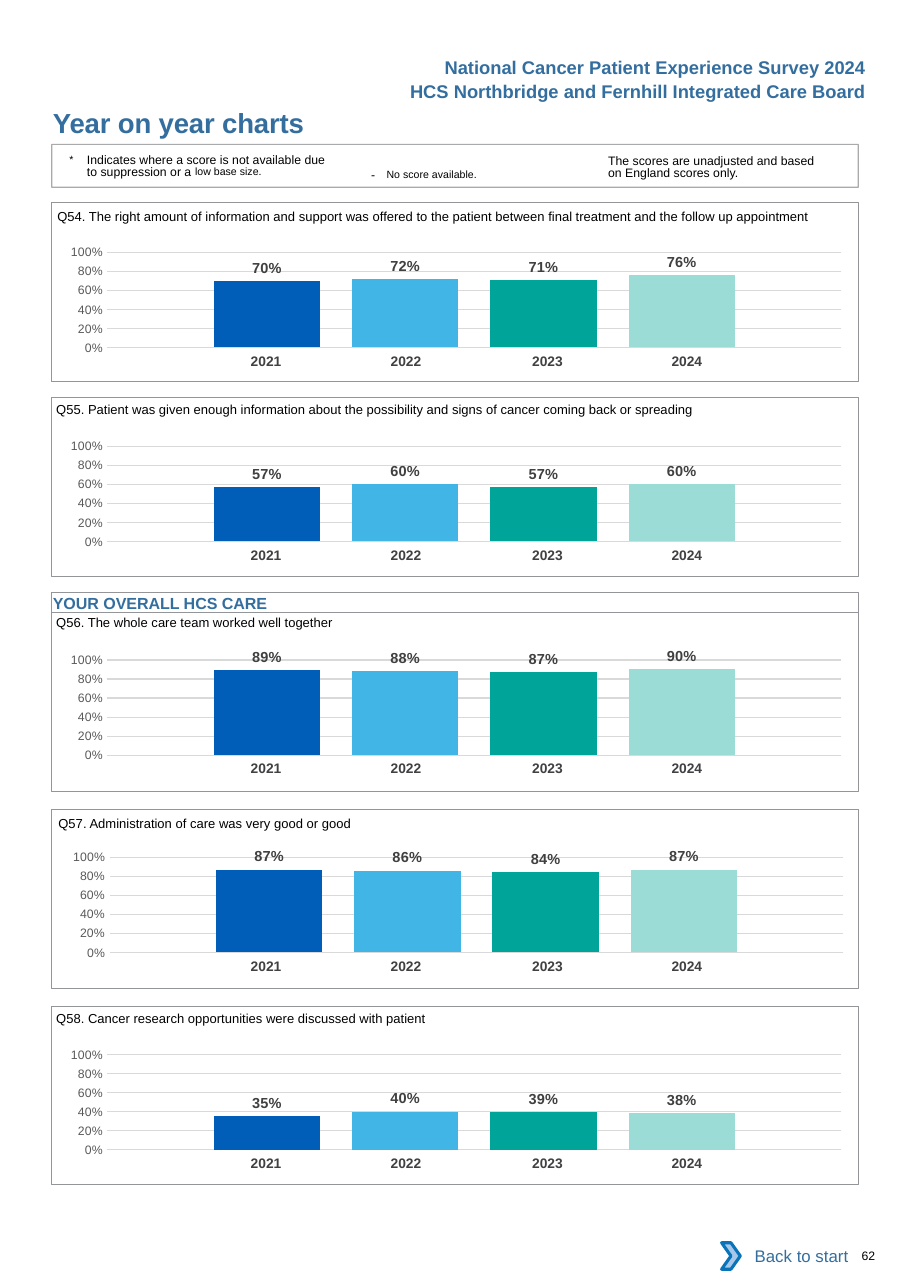
from dataclasses import dataclass
from lxml import etree
from pptx import Presentation
from pptx.chart.data import CategoryChartData
from pptx.dml.color import RGBColor
from pptx.enum.chart import XL_CHART_TYPE, XL_LABEL_POSITION, XL_TICK_MARK
from pptx.enum.shapes import MSO_SHAPE
from pptx.enum.text import MSO_ANCHOR, MSO_AUTO_SIZE, PP_ALIGN
from pptx.oxml import parse_xml
from pptx.oxml.ns import nsdecls, qn
from pptx.util import Inches, Pt

COLUMN, OUTSIDE = XL_CHART_TYPE.COLUMN_CLUSTERED, XL_LABEL_POSITION.OUTSIDE_END
NO_TICK = XL_TICK_MARK.NONE
RECT, CHEVRON = MSO_SHAPE.RECTANGLE, MSO_SHAPE.CHEVRON
TOP, MIDDLE, FIXED = MSO_ANCHOR.TOP, MSO_ANCHOR.MIDDLE, MSO_AUTO_SIZE.NONE
LEFT, CENTER, RIGHT = PP_ALIGN.LEFT, PP_ALIGN.CENTER, PP_ALIGN.RIGHT


@dataclass(frozen=True)
class Theme:
    """Colours, fonts and type sizes."""
    font: str = "Arial"
    chart_font: str = "Calibri"
    heading: str = "336E9F"
    ink: str = "000000"
    white: str = "FFFFFF"
    border: str = "939598"
    axis: str = "595959"
    grid: str = "D9D9D9"
    label: str = "404040"
    year: str = "414042"
    chevron: str = "A8C7E9"
    chevron_line: str = "0A74BB"
    bars: tuple = ("005EB8", "41B6E6", "00A499", "9CDCD7")
    title_size: float = 18
    header_size: float = 12
    link_size: float = 11
    section_size: float = 10.5
    chart_size: float = 10
    label_size: float = 9.5
    year_size: float = 9
    question_size: float = 8.5
    small_size: float = 8


T = Theme()
PANEL_X, PANEL_W, PANEL_H = 0.47, 7.32, 1.62
YEARS = ("2021", "2022", "2023", "2024")
PANELS = (
    (1.84, 0.04, -0.04, 0.27, -0.08, (0.70, 0.72, 0.71, 0.76),
     "Q54. The right amount of information and support was offered to the patient "
     "between final treatment and the follow up appointment"),
    (3.61, 0.03, -0.06, 0.26, -0.08, (0.57, 0.60, 0.57, 0.60),
     "Q55. Patient was given enough information about the possibility and signs of "
     "cancer coming back or spreading"),
    (5.56, 0.03, -0.07, 0.25, -0.08, (0.89, 0.88, 0.87, 0.90),
     "Q56. The whole care team worked well together"),
    (7.35, 0.05, -0.04, 0.25, -0.06, (0.87, 0.86, 0.84, 0.87),
     "Q57. Administration of care was very good or good"),
    (9.13, 0.03, -0.05, 0.26, -0.08, (0.35, 0.40, 0.39, 0.38),
     "Q58. Cancer research opportunities were discussed with patient"),
)


def rgb(value):
    """Return a colour from its hex value."""
    return RGBColor.from_string(value)


def set_font(font, size, color, bold=False, name=T.font):
    """Format a font."""
    font.name, font.size, font.bold = name, Pt(size), bold
    font.color.rgb = rgb(color)


def write(tf, runs, size=T.small_size, color=T.ink, bold=False, align=LEFT, inset=(0, 0, 0, 0),
          anchor=TOP, wrap=True, leading=None, margin=0, indent=0):
    """Fill a text frame with a string or with (text, size, spacing, baseline) runs."""
    tf.auto_size, tf.word_wrap, tf.vertical_anchor = FIXED, wrap, anchor
    tf.margin_left, tf.margin_top, tf.margin_right, tf.margin_bottom = map(Inches, inset)
    p = tf.paragraphs[0]
    p.alignment = align
    if leading:
        p.line_spacing = Pt(leading)
    pPr = p._p.get_or_add_pPr()
    pPr.set("marL", str(Inches(margin)))
    pPr.set("indent", str(Inches(indent)))
    for text, run_size, spacing, baseline in [(runs, size, 0, 0)] if isinstance(runs, str) else runs:
        r = p.add_run()
        r.text = text
        set_font(r.font, run_size, color, bold)
        rPr = r._r.get_or_add_rPr()
        rPr.set("spc", str(int(spacing * 100)))
        rPr.set("baseline", str(baseline * 1000))


def add_text(s, x, y, w, h, runs, **fmt):
    """Add a text box."""
    sp = s.shapes.add_textbox(*map(Inches, (x, y, w, h)))
    write(sp.text_frame, runs, **fmt)


def add_box(s, kind, x, y, w, h, fill=None, line=None, width=0.5):
    """Add a preset shape with optional fill and line."""
    sp = s.shapes.add_shape(kind, *map(Inches, (x, y, w, h)))
    sp.shadow.inherit = False
    for part, color in ((sp.fill, fill), (sp.line.fill, line)):
        if color:
            part.solid()
            part.fore_color.rgb = rgb(color)
        else:
            part.background()
    if line:
        sp.line.width = Pt(width)
    return sp


def add_years(s, x, y):
    """Add the one-row table of years under a chart."""
    widths, right_insets = (1.27, 1.27, 1.34, 1.27), (0, 0, 0.04, 0.12)
    gf = s.shapes.add_table(1, len(YEARS), *map(Inches, (x, y, sum(widths), 0.27)))
    table = gf.table
    table.first_row = table.horz_banding = False
    for style in gf._element.iter(qn("a:tableStyleId")):
        style.text = "{2D5ABB26-0587-4C30-8999-92F81FD0307C}"
    for i, (year, width, right) in enumerate(zip(YEARS, widths, right_insets)):
        table.columns[i].width = Inches(width)
        cell = table.cell(0, i)
        cell.fill.background()
        write(cell.text_frame, year, size=T.year_size, color=T.year, bold=True, align=CENTER)
        cell.margin_left, cell.margin_right = Inches(0.1), Inches(right)
        cell.margin_top = cell.margin_bottom = Inches(0.05)


def add_scores(s, x, y, w, h, scores):
    """Add the column chart of yearly scores."""
    data = CategoryChartData(number_format="0%")
    data.categories = ["1"]
    for i, score in enumerate(scores, 1):
        data.add_series(f"Series {i}", [score])
    chart = s.shapes.add_chart(COLUMN, *map(Inches, (x, y, w, h)), data).chart
    chart.has_legend = chart.has_title = False
    set_font(chart.font, T.chart_size, T.ink, name=T.chart_font)
    chart.category_axis.visible = False
    axis = chart.value_axis
    axis.minimum_scale, axis.maximum_scale, axis.major_unit = 0, 1, 0.2
    axis.major_tick_mark = axis.minor_tick_mark = NO_TICK
    axis.format.line.fill.background()
    axis.major_gridlines.format.line.color.rgb = rgb(T.grid)
    axis.major_gridlines.format.line.width = Pt(0.75)
    axis.tick_labels.number_format, axis.tick_labels.number_format_is_linked = "0%", False
    set_font(axis.tick_labels.font, T.small_size, T.axis)
    plot = chart.plots[0]
    plot.gap_width, plot.overlap, plot.vary_by_categories = 200, -30, False
    for series, color in zip(plot.series, T.bars):
        series.format.fill.solid()
        series.format.fill.fore_color.rgb = rgb(color)
        labels = series.data_labels
        labels.show_value, labels.position = True, OUTSIDE
        labels.number_format, labels.number_format_is_linked = "0%", False
        set_font(labels.font, T.label_size, T.label, True)
    area = chart._chartSpace.chart.plotArea
    for old in area.findall(qn("c:layout")):
        area.remove(old)
    parts = (("layoutTarget", "inner"), ("xMode", "edge"), ("yMode", "edge"),
             ("x", 0.08), ("y", 0.14), ("w", 0.91), ("h", 0.67))
    inner = "".join(f'<c:{tag} val="{val}"/>' for tag, val in parts)
    area.insert(0, parse_xml(f'<c:layout {nsdecls("c")}><c:manualLayout>{inner}'
                             '</c:manualLayout></c:layout>'))


def add_panel(s, x, y, w, h, text_dx, text_dy, chart_dy, chart_dx, scores, question):
    """Add a framed question with its chart and years."""
    add_text(s, x + text_dx, y + text_dy, w - 0.1, 0.24, question,
             size=T.question_size, inset=(0, 0.09, 0, 0), margin=0.01)
    add_years(s, x + 1.26, y + chart_dy + 1.05)
    add_scores(s, x + chart_dx, y + chart_dy, w, 1.29, scores)
    add_box(s, RECT, x, y, w, h, line=T.border)


def add_header(s, x, y, w):
    """Add the survey lines and the page title."""
    for i, line in enumerate(("National Cancer Patient Experience Survey 2024",
                              "HCS Northbridge and Fernhill Integrated Care Board")):
        add_text(s, x + w - 4.4, y + 0.22 * i, 4.4, 0.3, line, size=T.header_size, color=T.heading,
                 bold=True, align=RIGHT, wrap=False, inset=(0.1, 0.05, 0.1, 0.05))
    title = s.shapes.title
    title.left, title.top, title.width, title.height = map(Inches, (x, y + 0.5, 4.5, 0.3))
    write(title.text_frame, [("Year on year charts", T.title_size, -0.1, 0)],
          color=T.heading, bold=True, margin=0.01)


def add_key(s, x, y, w, h):
    """Add the framed notes on symbols and scores."""
    size, raised = T.small_size, T.header_size
    add_text(s, x + 5.05, y + 0.07, 1.95, 0.27, "The scores are unadjusted and based on England scores only.",
             leading=8.1, inset=(0, 0.03, 0, 0))
    add_text(s, x + 2.8, y + 0.1, 1.83, 0.24, inset=(0.1, 0.05, 0.1, 0.05),
             runs=[("- ", size, 2.6, 0), ("No score available.", raised, 0, 3)])
    add_text(s, x + 0.16, y + 0.07, 2.4, 0.27, leading=8.1, inset=(0, 0.03, 0, 0), margin=0.16, indent=-0.16,
             runs=[("*\t", raised, 0, 3),
                   ("Indicates where a score is not available due to suppression or a ", size, 0, 0),
                   ("low base size.", raised, 0, 7)])
    frame = add_box(s, RECT, x, y, w, h, line=T.border, width=0.75)
    color = frame._element.spPr.find(qn("a:ln")).find(".//" + qn("a:srgbClr"))
    etree.SubElement(color, qn("a:alpha")).set("val", "80000")


def add_footer(s, x, y):
    """Add the back link and the page number."""
    link = add_box(s, RECT, x + 0.07, y, 1.18, 0.42, fill=T.white)
    write(link.text_frame, "Back to start", size=T.link_size, color=T.heading, align=RIGHT,
          anchor=MIDDLE, inset=(0.1, 0.05, 0.1, 0.05))
    add_box(s, CHEVRON, x, y + 0.09, 0.17, 0.24, fill=T.chevron, line=T.chevron_line, width=2)
    add_text(s, x + 1.17, y + 0.14, 0.51, 0.13, "62", margin=0.1)


def main():
    """Build and save the page."""
    prs = Presentation()
    prs.slide_width, prs.slide_height = Inches(8.26), Inches(11.69)
    s = prs.slides.add_slide(prs.slide_layouts[5])
    add_header(s, PANEL_X, 0.46, 7.49)
    add_key(s, PANEL_X, 1.31, PANEL_W, 0.39)
    section = add_box(s, RECT, PANEL_X, 5.38, PANEL_W, 0.18, line=T.border)
    write(section.text_frame, "YOUR OVERALL HCS CARE", size=T.section_size,
          color=T.heading, bold=True, inset=(0, 0.01, 0, 0), margin=0.01)
    for top, *parts in PANELS:
        add_panel(s, PANEL_X, top, PANEL_W, PANEL_H, *parts)
    add_footer(s, 6.55, 11.19)
    prs.save("out.pptx")


if __name__ == "__main__":
    main()
